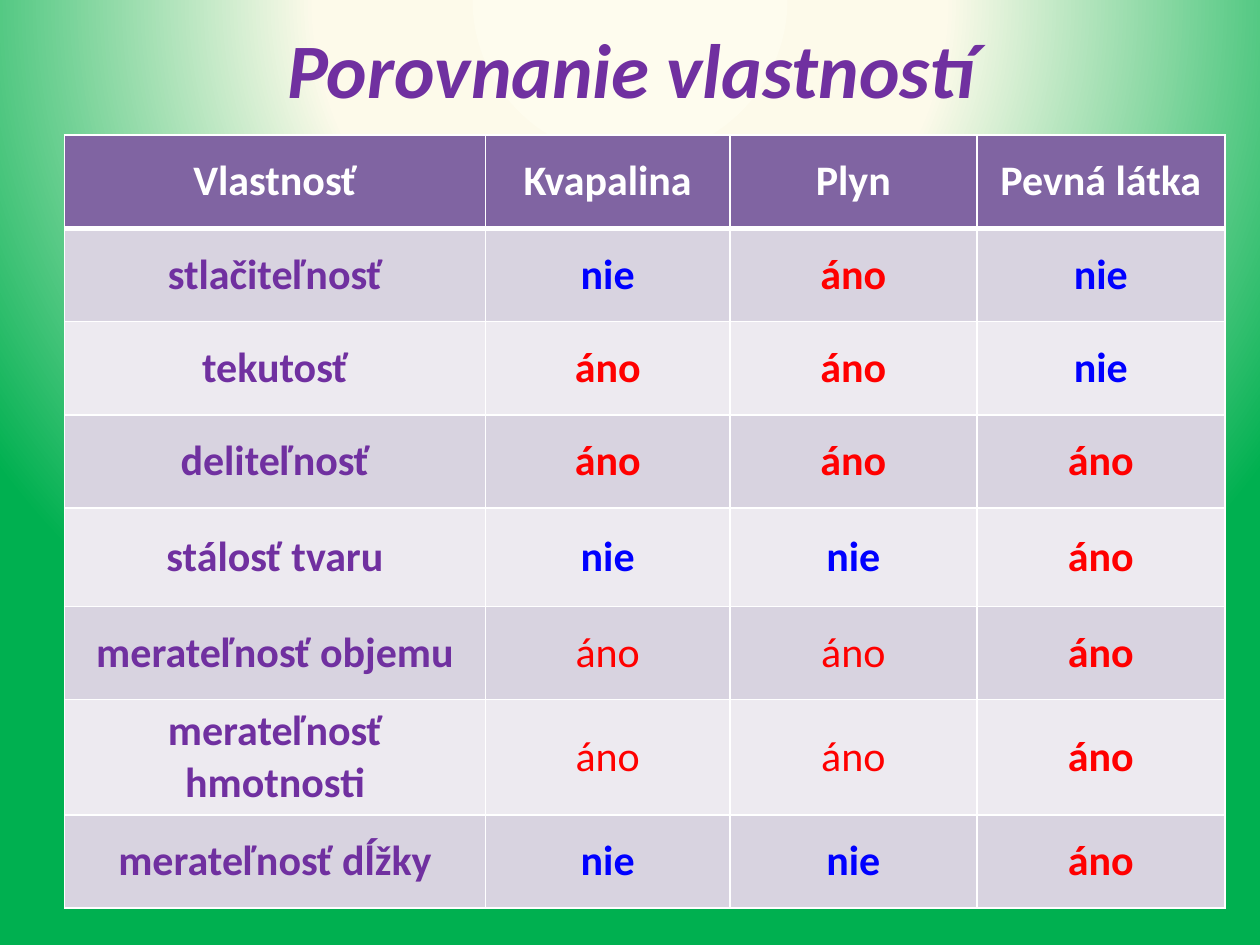
import pptx
import pptx.dml.color
import pptx.enum.text
import pptx.oxml
import pptx.oxml.ns
import pptx.util

Pt = pptx.util.Pt
FONT = "Calibri"
COLORS = {
    "purple": "7030A0", "header": "8064A2", "white": "FFFFFF",
    "band_dark": "D8D3E0", "band_light": "EDEAF0",
    "nie": "0000FF", "áno": "FF0000",
    "cream": "FEFCEE", "cream_edge": "FDFAEA", "green": "00B050",
}
HEADINGS = ["Vlastnosť", "Kvapalina", "Plyn", "Pevná látka"]
PROPERTIES = [
    ("stlačiteľnosť", "nie", "áno", "nie"),
    ("tekutosť", "áno", "áno", "nie"),
    ("deliteľnosť", "áno", "áno", "áno"),
    ("stálosť tvaru", "nie", "nie", "áno"),
    ("merateľnosť objemu", "áno", "áno", "áno"),
    ("merateľnosť hmotnosti", "áno", "áno", "áno"),
    ("merateľnosť dĺžky", "nie", "nie", "áno"),
]
REGULAR_CELLS = {(row, column) for row in (5, 6) for column in (1, 2)}
COLUMN_WIDTHS = [240.5, 139.7, 141.1, 141.8]
ROW_HEIGHTS = [53.3] * 4 + [56.2] + [53.3] * 3


def rgb(name):
    return pptx.dml.color.RGBColor.from_string(COLORS[name])


def format_text(frame, size, color, bold=True, italic=False):
    frame.vertical_anchor = pptx.enum.text.MSO_ANCHOR.MIDDLE
    para = frame.paragraphs[0]
    para.alignment = pptx.enum.text.PP_ALIGN.CENTER
    font = para.font
    font.name, font.size = FONT, Pt(size)
    font.bold, font.italic = bold, italic
    font.color.rgb = rgb(color)


def set_background(page):
    stops = "".join(
        f'<a:gs pos="{percent * 1000}"><a:srgbClr val="{COLORS[name]}"/></a:gs>'
        for percent, name in [(0, "cream"), (40, "cream_edge"), (100, "green")])
    background = pptx.oxml.parse_xml(
        f'<p:bg {pptx.oxml.ns.nsdecls("p", "a")}><p:bgPr>'
        f'<a:gradFill rotWithShape="1"><a:gsLst>{stops}</a:gsLst>'
        '<a:path path="circle">'
        '<a:fillToRect l="50000" t="-80000" r="50000" b="180000"/></a:path>'
        '</a:gradFill><a:effectLst/></p:bgPr></p:bg>')
    page.element.cSld.insert(0, background)


def add_title(page, text):
    title = page.shapes.title
    title.left, title.top, title.width, title.height = Pt(36.7), Pt(0), Pt(648), Pt(77)
    title.text_frame.text = text
    format_text(title.text_frame, 44, "purple", italic=True)


def set_borders(cell, top, bottom):
    properties = cell._tc.get_or_add_tcPr()
    sides = [("L", 1), ("R", 1), ("T", top), ("B", bottom)]
    for position, (side, width) in enumerate(sides):
        properties.insert(position, pptx.oxml.parse_xml(
            f'<a:ln{side} {pptx.oxml.ns.nsdecls("a")} w="{Pt(width)}"><a:solidFill>'
            f'<a:srgbClr val="{COLORS["white"]}"/></a:solidFill></a:ln{side}>'))


def fill_cell(cell, text, row, column):
    if row == 0:
        fill, color = "header", "white"
    else:
        fill = "band_dark" if row % 2 else "band_light"
        color = text if column else "purple"
    cell.text = text
    format_text(cell.text_frame, 24, color, bold=(row, column) not in REGULAR_CELLS)
    cell.vertical_anchor = pptx.enum.text.MSO_ANCHOR.MIDDLE
    cell.fill.solid()
    cell.fill.fore_color.rgb = rgb(fill)
    # A thick line parts the headings from the body
    set_borders(cell, top=3 if row == 1 else 1, bottom=3 if row == 0 else 1)


def add_comparison(page):
    lines = [HEADINGS, *PROPERTIES]
    table = page.shapes.add_table(
        len(lines), len(HEADINGS), Pt(36.9), Pt(77.2),
        Pt(sum(COLUMN_WIDTHS)), Pt(sum(ROW_HEIGHTS))).table
    for column, width in zip(table.columns, COLUMN_WIDTHS):
        column.width = Pt(width)
    for row, height in zip(table.rows, ROW_HEIGHTS):
        row.height = Pt(height)
    for row, texts in enumerate(lines):
        for column, text in enumerate(texts):
            fill_cell(table.cell(row, column), text, row, column)


def main():
    deck = pptx.Presentation()
    deck.slide_width, deck.slide_height = Pt(720), Pt(540)
    page = deck.slides.add_slide(deck.slide_layouts[5])
    set_background(page)
    add_title(page, "Porovnanie vlastností")
    add_comparison(page)
    deck.save("out.pptx")


if __name__ == "__main__":
    main()
